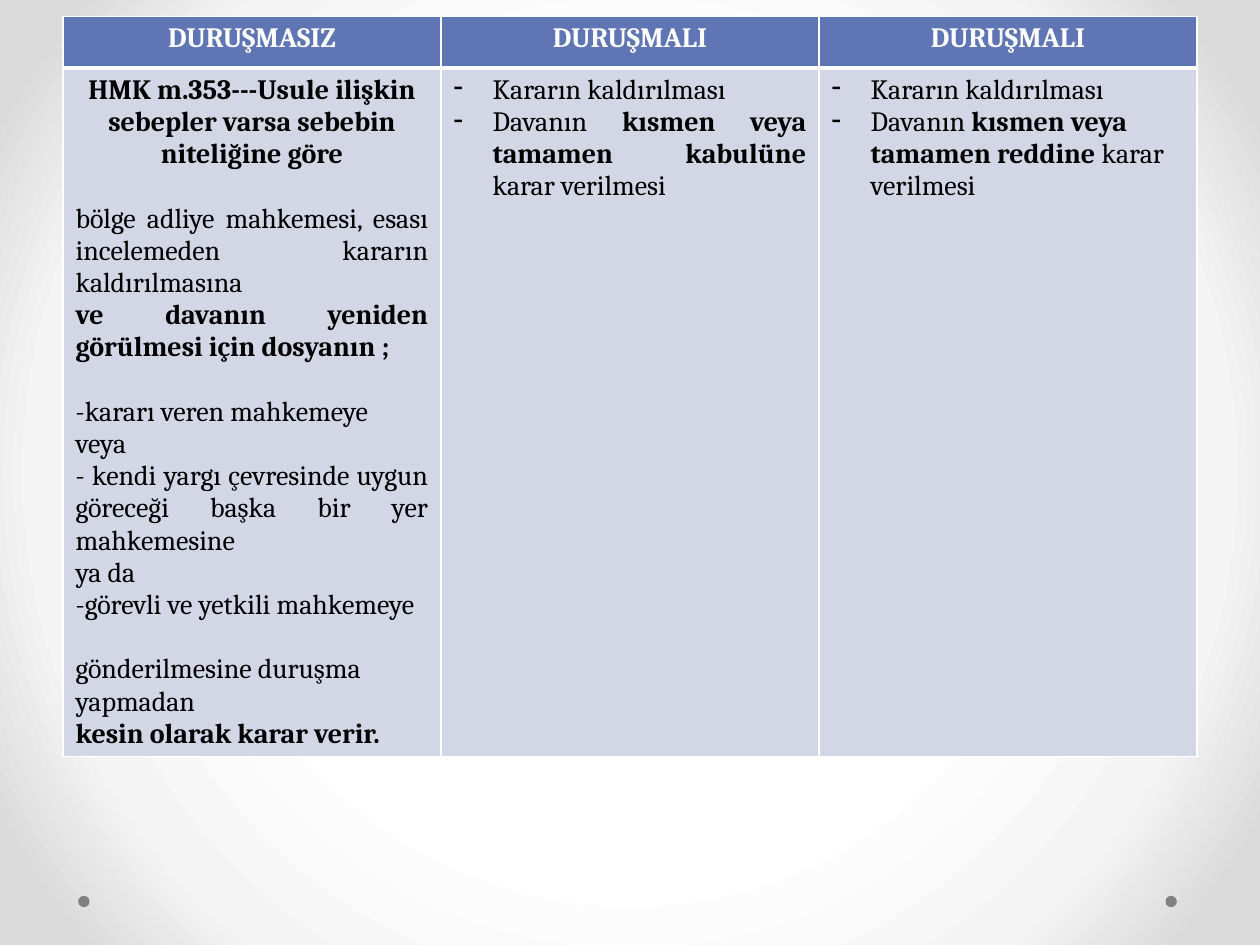
from lxml.etree import SubElement
from pptx import Presentation
from pptx.dml.color import RGBColor
from pptx.enum.shapes import MSO_SHAPE
from pptx.enum.text import PP_ALIGN
from pptx.oxml import parse_xml
from pptx.oxml.ns import nsdecls, qn
from pptx.util import Inches, Pt

FONT = "Cambria"
SIZE = Pt(16)
BLANK_LINE = Pt(18.5)
WHITE = RGBColor(0xFF, 0xFF, 0xFF)
BLACK = RGBColor(0x00, 0x00, 0x00)
GRAY = RGBColor(0x80, 0x80, 0x80)
HEADER_BLUE = RGBColor(0x60, 0x76, 0xB4)
BODY_BLUE = RGBColor(0xD2, 0xD6, 0xE5)
BACKGROUND_STOPS = [(50, "FFFFFF"), (76, "F4F4F4"), (92, "DADADA")]

LEFT, CENTER, JUSTIFY = PP_ALIGN.LEFT, PP_ALIGN.CENTER, PP_ALIGN.JUSTIFY
HEADERS = ["DURUŞMASIZ", "DURUŞMALI", "DURUŞMALI"]

# fmt: off
WITHOUT_HEARING = [
    (CENTER, False, [("HMK m.353---Usule ilişkin sebepler varsa sebebin niteliğine göre", True)]),
    (JUSTIFY, True, [("bölge adliye mahkemesi, esası incelemeden kararın kaldırılmasına", False)]),
    (JUSTIFY, False, [("ve davanın yeniden görülmesi için dosyanın ;", True)]),
    (JUSTIFY, True, [("-kararı veren mahkemeye", False)]),
    (LEFT, False, [("veya", False)]),
    (JUSTIFY, False, [("- kendi yargı çevresinde uygun göreceği başka bir yer mahkemesine", False)]),
    (LEFT, False, [("ya da", False)]),
    (JUSTIFY, False, [("-görevli ve yetkili mahkemeye", False)]),
    (LEFT, True, [("gönderilmesine duruşma yapmadan", False)]),
    (LEFT, False, [("kesin olarak karar verir.", True)]),
]
# fmt: on


def hearing_items(alignment, outcome):
    return [
        (alignment, False, [("Kararın kaldırılması", False)]),
        (alignment, False, [("Davanın ", False), (outcome, True), ("karar verilmesi", False)]),
    ]


BODIES = [
    (WITHOUT_HEARING, False),
    (hearing_items(JUSTIFY, "kısmen veya tamamen kabulüne "), True),
    (hearing_items(LEFT, "kısmen veya tamamen reddine "), True),
]


def set_background(slide):
    stops = "".join(
        f'<a:gs pos="{position * 1000}"><a:srgbClr val="{color}"/></a:gs>'
        for position, color in BACKGROUND_STOPS
    )
    background = parse_xml(
        f'<p:bg {nsdecls("p", "a")}><p:bgPr><a:gradFill rotWithShape="1">'
        f'<a:gsLst>{stops}</a:gsLst><a:path path="circle">'
        '<a:fillToRect l="50000" t="50000" r="50000" b="50000"/></a:path>'
        "</a:gradFill><a:effectLst/></p:bgPr></p:bg>"
    )
    slide.element.cSld.insert(0, background)


def style_cell(cell, color, top, bottom):
    cell.fill.solid()
    cell.fill.fore_color.rgb = color
    properties = cell._tc.get_or_add_tcPr()
    for index, (side, width) in enumerate(
        [("lnL", 1), ("lnR", 1), ("lnT", top), ("lnB", bottom)]
    ):
        border = parse_xml(
            f'<a:{side} {nsdecls("a")} w="{Pt(width)}"><a:solidFill>'
            f'<a:srgbClr val="{WHITE}"/></a:solidFill></a:{side}>'
        )
        properties.insert(index, border)


def add_dash(paragraph):
    properties = paragraph._p.get_or_add_pPr()
    properties.set("marL", str(Inches(0.31)))
    properties.set("indent", str(-Inches(0.31)))
    SubElement(properties, qn("a:buChar")).set("char", "-")


def write_cell(cell, paragraphs, color, dashed=False):
    text_frame = cell.text_frame
    for index, (alignment, gap, runs) in enumerate(paragraphs):
        paragraph = text_frame.add_paragraph() if index else text_frame.paragraphs[0]
        paragraph.alignment = alignment
        if gap:
            paragraph.space_before = BLANK_LINE
        if dashed:
            add_dash(paragraph)
        for text, bold in runs:
            run = paragraph.add_run()
            run.text = text
            run.font.name = FONT
            run.font.size = SIZE
            run.font.bold = bold
            run.font.color.rgb = color


def add_dot(slide, left):
    dot = slide.shapes.add_shape(
        MSO_SHAPE.OVAL, Inches(left), Inches(7.11), Inches(0.09), Inches(0.09)
    )
    dot.shadow.inherit = False
    dot.fill.solid()
    dot.fill.fore_color.rgb = GRAY
    dot.line.fill.background()


def main():
    presentation = Presentation()
    presentation.slide_width, presentation.slide_height = Inches(10), Inches(7.5)
    slide = presentation.slides.add_slide(presentation.slide_layouts[6])
    set_background(slide)
    for left in (9.25, 0.62):
        add_dot(slide, left)

    table = slide.shapes.add_table(
        2, 3, Inches(0.5), Inches(0.13), Inches(9), Inches(5.86)
    ).table
    table.rows[0].height, table.rows[1].height = Inches(0.41), Inches(5.45)
    for column, (header, (body, dashed)) in enumerate(zip(HEADERS, BODIES)):
        header_cell, body_cell = table.cell(0, column), table.cell(1, column)
        write_cell(header_cell, [(CENTER, False, [(header, True)])], WHITE)
        style_cell(header_cell, HEADER_BLUE, top=1, bottom=3)
        write_cell(body_cell, body, BLACK, dashed)
        style_cell(body_cell, BODY_BLUE, top=3, bottom=1)

    presentation.save("out.pptx")


if __name__ == "__main__":
    main()
